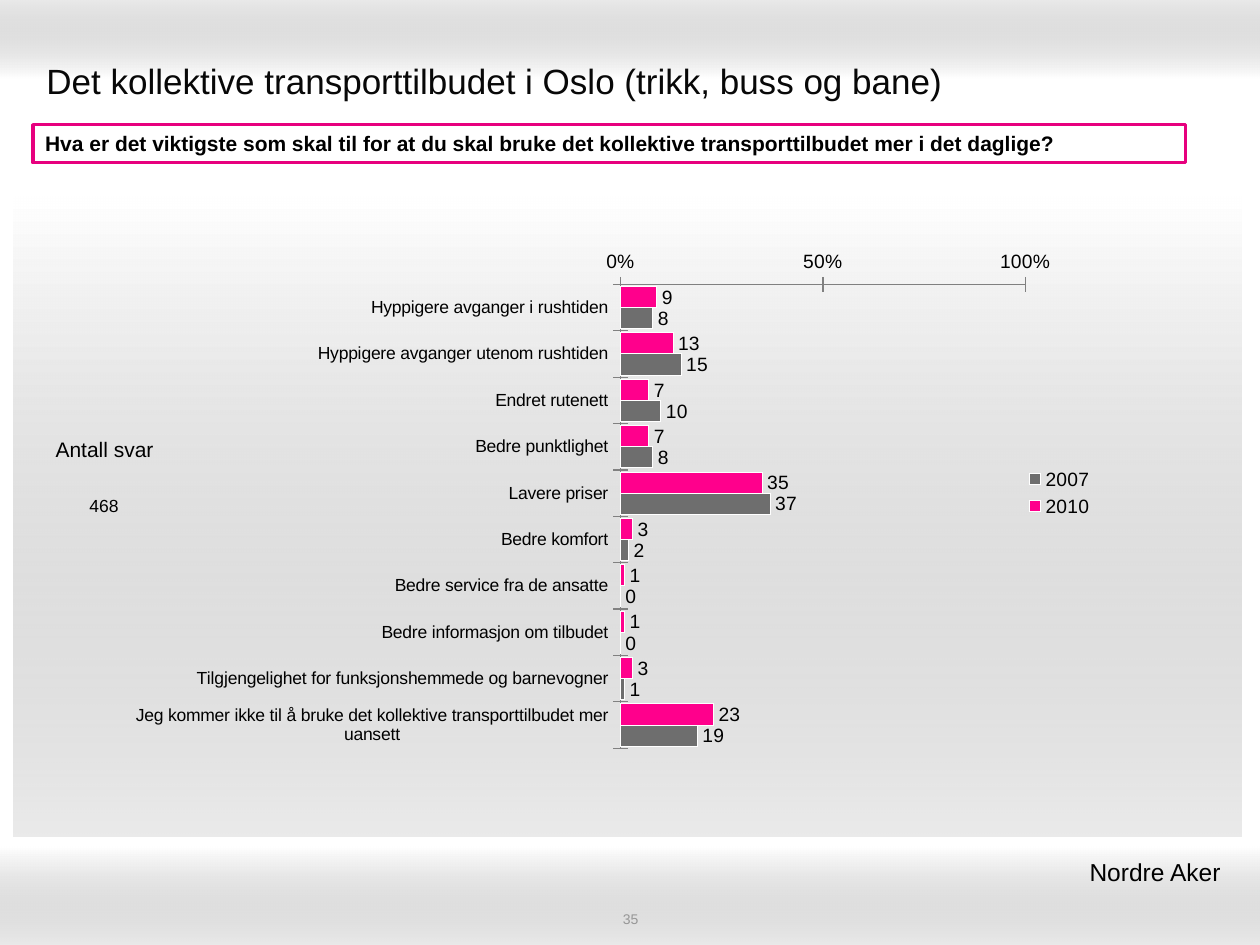
from lxml import etree
from pptx import Presentation, util as u
from pptx.chart.data import CategoryChartData
from pptx.dml.color import RGBColor
from pptx.enum import chart as ch, shapes, text
from pptx.oxml import parse_xml
from pptx.oxml.ns import nsdecls, qn

COLORS = {"white": "FFFFFF", "shade": "999999", "title": "080808", "black": "000000",
          "number": "969696", "frame": "E7007E", "axis": "808080",
          "2010": "FF008C", "2007": "6E6E6E"}
ANSWERS = [
    ("Hyppigere avganger i rushtiden", 9, 8),
    ("Hyppigere avganger utenom rushtiden", 13, 15),
    ("Endret rutenett", 7, 10),
    ("Bedre punktlighet", 7, 8),
    ("Lavere priser", 35, 37),
    ("Bedre komfort", 3, 2),
    ("Bedre service fra de ansatte", 1, 0),
    ("Bedre informasjon om tilbudet", 1, 0),
    ("Tilgjengelighet for funksjonshemmede og barnevogner", 3, 1),
    ("Jeg kommer ikke til å bruke det kollektive transporttilbudet mer uansett", 23, 19),
]
ALIGN = text.PP_ALIGN
ANCHOR = text.MSO_ANCHOR


def rgb(name):
    return RGBColor.from_string(COLORS[name])


class SlideBuilder:
    font = "Arial"

    def __init__(self, slide):
        self.s = slide

    def box(self, at):
        return [u.Inches(v) for v in at]

    def style(self, font, size, color="black", bold=False):
        font.name, font.size, font.bold = self.font, u.Pt(size), bold
        font.color.rgb = rgb(color)

    def add_words(self, tf, words, size, color="black", align=ALIGN.LEFT, bold=False):
        p = tf.paragraphs[0]
        p.alignment = align
        r = p.add_run()
        r.text = words
        self.style(r.font, size, color, bold)

    def rect(self, at):
        sp = self.s.shapes.add_shape(shapes.MSO_SHAPE.RECTANGLE, *self.box(at))
        sp.shadow.inherit = False
        return sp

    def fade(self, at, angle):
        """Rectangle fading from white to translucent grey, clockwise angle."""
        sp = self.rect(at)
        sp.line.fill.background()
        sp.fill.background()
        no_fill = sp.element.spPr.find(qn("a:noFill"))
        grad = parse_xml(
            f'<a:gradFill {nsdecls("a")} rotWithShape="1"><a:gsLst>'
            f'<a:gs pos="0"><a:srgbClr val="{COLORS["white"]}"/></a:gs>'
            f'<a:gs pos="100000"><a:srgbClr val="{COLORS["shade"]}">'
            f'<a:alpha val="20000"/></a:srgbClr></a:gs></a:gsLst>'
            f'<a:lin ang="{angle * 60000}" scaled="0"/></a:gradFill>')
        sp.element.spPr.replace(no_fill, grad)

    def label(self, at, words, size, color="black", align=ALIGN.LEFT, anchor=ANCHOR.MIDDLE):
        tf = self.s.shapes.add_textbox(*self.box(at)).text_frame
        tf.word_wrap, tf.vertical_anchor = True, anchor
        self.add_words(tf, words, size, color, align)

    def framed(self, at, words, size):
        sp = self.rect(at)
        sp.fill.solid()
        sp.fill.fore_color.rgb = rgb("white")
        sp.line.color.rgb, sp.line.width = rgb("frame"), u.Pt(2)
        tf = sp.text_frame
        tf.word_wrap, tf.vertical_anchor = True, ANCHOR.TOP
        self.add_words(tf, words, size, bold=True)

    def single_cell(self, at, words, size, align):
        table = self.s.shapes.add_table(1, 1, *self.box(at)).table
        table.first_row = table.horz_banding = False
        cell = table.cell(0, 0)
        cell.fill.background()
        cell.vertical_anchor = ANCHOR.MIDDLE
        self.add_words(cell.text_frame, words, size, align=align)
        tcPr = cell._tc.get_or_add_tcPr()
        for i, side in enumerate(("lnL", "lnR", "lnT", "lnB")):
            ln = parse_xml(f'<a:{side} {nsdecls("a")} w="0"><a:noFill/></a:{side}>')
            tcPr.insert(i, ln)

    def bar_chart(self, at, plot_area):
        data = CategoryChartData(number_format="0")
        names, new, old = zip(*ANSWERS)
        data.categories = names
        data.add_series("2010", new)
        data.add_series("2007", old)
        chart = self.s.shapes.add_chart(
            ch.XL_CHART_TYPE.BAR_CLUSTERED, *self.box(at), data).chart
        self.style(chart.font, 11)
        chart.has_title = False
        chart.has_legend = True
        chart.legend.position = ch.XL_LEGEND_POSITION.RIGHT
        chart.legend.include_in_layout = True
        self.style(chart.legend.font, 11)

        plot = chart.plots[0]
        plot.gap_width, plot.overlap, plot.vary_by_categories = 20, 0, False
        for series in plot.series:
            series.format.fill.solid()
            series.format.fill.fore_color.rgb = rgb(series.name)
            series.format.line.color.rgb = rgb("white")
            labels = series.data_labels
            labels.show_value = True
            labels.number_format, labels.number_format_is_linked = "0", False
            labels.position = ch.XL_LABEL_POSITION.OUTSIDE_END
            self.style(labels.font, 11)

        for axis, size in ((chart.category_axis, 10), (chart.value_axis, 11)):
            axis.has_major_gridlines = False
            axis.major_tick_mark = ch.XL_TICK_MARK.CROSS
            axis.format.line.color.rgb = rgb("axis")
            self.style(axis.tick_labels.font, size)
        chart.category_axis.reverse_order = True
        value = chart.value_axis
        value.minimum_scale, value.maximum_scale, value.major_unit = 0, 100, 50
        value.tick_labels.number_format = "General\\%"
        value.tick_labels.number_format_is_linked = False
        self.place_plot(chart, plot_area)

    def place_plot(self, chart, plot_area):
        """Fix the inner plot area, given as fractions of the chart."""
        area = chart._chartSpace.chart.plotArea
        for old in area.findall(qn("c:layout")):
            area.remove(old)
        layout = etree.Element(qn("c:layout"))
        manual = etree.SubElement(layout, qn("c:manualLayout"))
        settings = [("layoutTarget", "inner"), ("xMode", "edge"), ("yMode", "edge"),
                    *zip("xywh", plot_area)]
        for tag, val in settings:
            etree.SubElement(manual, qn(f"c:{tag}")).set("val", str(val))
        area.insert(0, layout)


def main():
    prs = Presentation()
    prs.slide_width, prs.slide_height = u.Inches(10), u.Inches(7.5)
    b = SlideBuilder(prs.slides.add_slide(prs.slide_layouts[6]))
    b.fade((0, 0, 10, 0.62), 270)
    b.fade((0, 6.72, 10, 0.78), 90)
    b.fade((0.11, 1.56, 9.74, 5.08), 90)
    b.label((0.27, 0.36, 9.45, 0.55),
            "Det kollektive transporttilbudet i Oslo (trikk, buss og bane)", 20, "title")
    b.label((3.42, 7.22, 3.17, 0.14), "35", 8, "number", ALIGN.CENTER)
    b.label((6.1, 6.75, 3.74, 0.34), "Nordre Aker ", 14, align=ALIGN.RIGHT, anchor=ANCHOR.TOP)
    b.bar_chart((0.75, 1.55, 8.03, 4.72), (0.52, 0.15, 0.4, 0.78))
    b.framed((0.26, 0.99, 9.15, 0.3),
             "Hva er det viktigste som skal til for at du skal bruke det kollektive "
             "transporttilbudet mer i det daglige?", 12)
    b.single_cell((0.52, 3.74, 0.52, 0.56), "468", 10, ALIGN.RIGHT)
    b.single_cell((0.12, 3.28, 1.42, 0.59), "Antall svar", 12, ALIGN.CENTER)
    prs.save("out.pptx")


if __name__ == "__main__":
    main()
